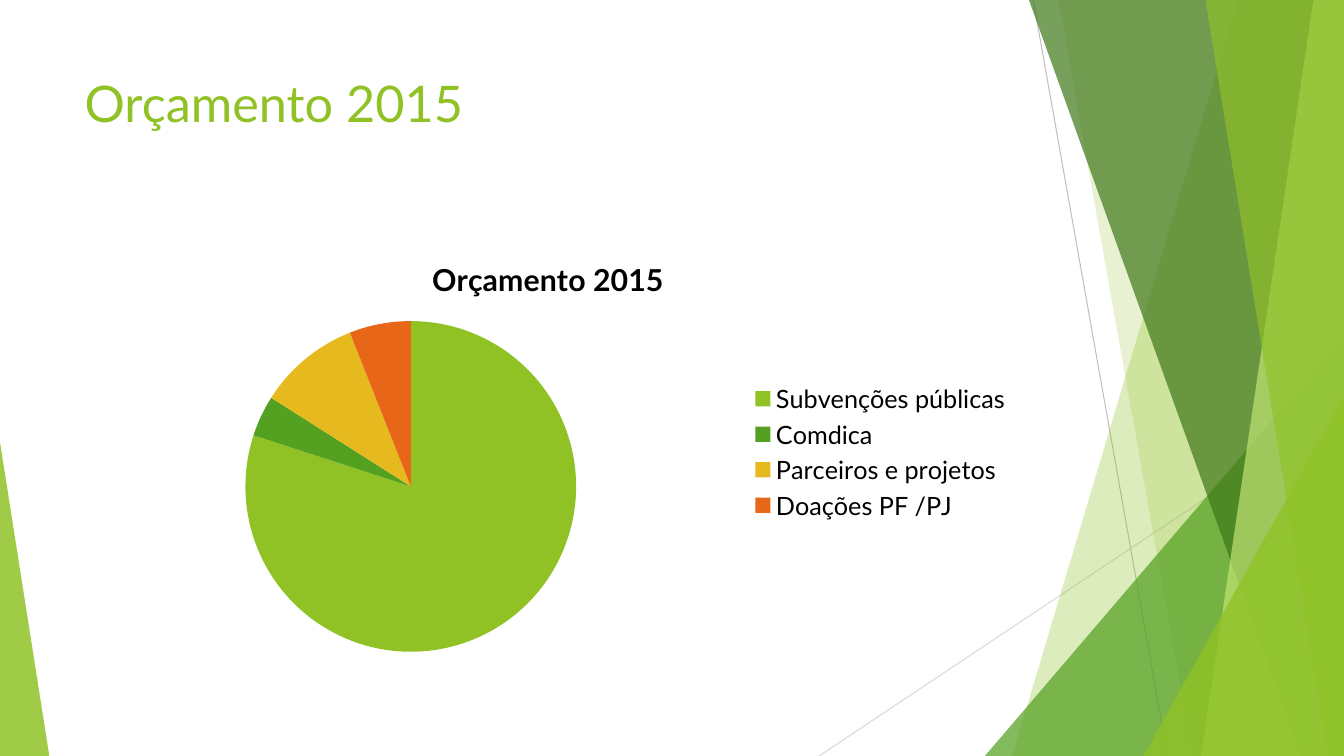
from typing import NamedTuple

from lxml import etree
from pptx import Presentation
from pptx.chart.data import CategoryChartData
from pptx.dml.color import RGBColor
from pptx.enum.chart import XL_CHART_TYPE, XL_LEGEND_POSITION
from pptx.enum.shapes import MSO_CONNECTOR, MSO_SHAPE
from pptx.enum.text import MSO_ANCHOR, PP_ALIGN
from pptx.oxml.ns import qn
from pptx.util import Emu, Pt

PIE = XL_CHART_TYPE.PIE
LEGEND_RIGHT = XL_LEGEND_POSITION.RIGHT
STRAIGHT = MSO_CONNECTOR.STRAIGHT
TRIANGLE = MSO_SHAPE.ISOSCELES_TRIANGLE
TOP = MSO_ANCHOR.TOP
LEFT = PP_ALIGN.LEFT

EMU_PER_PX = 9525
WIDTH, HEIGHT = 1280, 720
TITLE_ONLY_LAYOUT = 5
FONT = "Lato"
LIME = "90C226"
GREEN = "54A021"
HEADING = "Orçamento 2015"


class Ray(NamedTuple):
    start: tuple[int, int]
    end: tuple[int, int]
    color: str


class Band(NamedTuple):
    """Full-height area from a slanted left edge to the right slide edge."""
    top_x: int
    bottom_x: int
    color: str
    opacity: int


class Corner(NamedTuple):
    """Right triangle standing on the bottom slide edge."""
    left: int
    top: int
    width: int
    apex: int
    color: str
    opacity: int


class Slice(NamedTuple):
    label: str
    value: int
    color: str


RAYS = [
    Ray((984, 0), (1112, HEIGHT), "BFBFBF"),
    Ray((WIDTH, 387), (780, HEIGHT), "D9D9D9"),
]
FACETS = [
    Band(1179, 964, LIME, 30),
    Band(1008, 1136, LIME, 20),
    Corner(938, 320, 342, 1, GREEN, 72),
    Band(980, 1239, "3F7819", 70),
    Band(1251, 1144, "C0E474", 70),
    Band(1148, 1265, LIME, 65),
    Corner(1089, 377, 191, 1, LIME, 80),
    Corner(0, 421, 47, 0, LIME, 85),
]
SLICES = [
    Slice("Subvenções públicas", 80, LIME),
    Slice("Comdica", 4, GREEN),
    Slice("Parceiros e projetos", 10, "E6B91E"),
    Slice("Doações PF /PJ", 6, "E76618"),
]


def px(length: int) -> Emu:
    return Emu(length * EMU_PER_PX)


def paint(color_format, color: str) -> None:
    color_format.rgb = RGBColor.from_string(color)


def style_font(font, size: float, color: str, bold: bool = False) -> None:
    font.name = FONT
    font.size = Pt(size)
    font.bold = bold
    paint(font.color, color)


def draw_ray(slide, ray: Ray) -> None:
    connector = slide.shapes.add_connector(
        STRAIGHT, *map(px, ray.start + ray.end))
    connector.line.width = Pt(0.75)
    paint(connector.line.color, ray.color)
    etree.SubElement(connector._element.spPr, qn("a:effectLst"))


def draw_facet(slide, facet: Band | Corner) -> None:
    if isinstance(facet, Band):
        builder = slide.shapes.build_freeform(facet.top_x, 0, EMU_PER_PX)
        builder.add_line_segments(
            [(WIDTH, 0), (WIDTH, HEIGHT), (facet.bottom_x, HEIGHT)])
        shape = builder.convert_to_shape()
    else:
        shape = slide.shapes.add_shape(
            TRIANGLE, px(facet.left), px(facet.top),
            px(facet.width), px(HEIGHT - facet.top))
        shape.adjustments[0] = facet.apex
    shape.shadow.inherit = False
    shape.line.fill.background()
    shape.fill.solid()
    paint(shape.fill.fore_color, facet.color)
    color_element = shape._element.spPr.find(
        f"{qn('a:solidFill')}/{qn('a:srgbClr')}")
    etree.SubElement(color_element, qn("a:alpha"),
                     val=str(facet.opacity * 1000))


def fill_title(slide) -> None:
    title = slide.shapes.title
    title.left, title.top, title.width, title.height = map(
        px, (71, 64, 902, 138))
    frame = title.text_frame
    frame.text = HEADING
    frame.vertical_anchor = TOP
    paragraph = frame.paragraphs[0]
    paragraph.alignment = LEFT
    style_font(paragraph.runs[0].font, 36, LIME)


def draw_budget_chart(slide) -> None:
    data = CategoryChartData()
    data.categories = [part.label for part in SLICES]
    data.add_series(HEADING, [part.value for part in SLICES])
    chart = slide.shapes.add_chart(
        PIE, *map(px, (71, 227, 902, 407)), data).chart
    style_font(chart.font, 18, "000000")

    chart.has_title = True
    title_frame = chart.chart_title.text_frame
    title_frame.text = HEADING
    style_font(title_frame.paragraphs[0].runs[0].font, 21.6, "000000", True)
    chart.chart_title.include_in_layout = False

    chart.has_legend = True
    chart.legend.position = LEGEND_RIGHT
    chart.legend.include_in_layout = False

    plot = chart.plots[0]
    plot.vary_by_categories = True
    for index, part in enumerate(SLICES):
        fill = plot.series[0].points[index].format.fill
        fill.solid()
        paint(fill.fore_color, part.color)


def main() -> None:
    presentation = Presentation()
    presentation.slide_width = px(WIDTH)
    presentation.slide_height = px(HEIGHT)
    slide = presentation.slides.add_slide(
        presentation.slide_layouts[TITLE_ONLY_LAYOUT])
    for ray in RAYS:
        draw_ray(slide, ray)
    for facet in FACETS:
        draw_facet(slide, facet)
    fill_title(slide)
    draw_budget_chart(slide)
    presentation.save("out.pptx")


if __name__ == "__main__":
    main()
